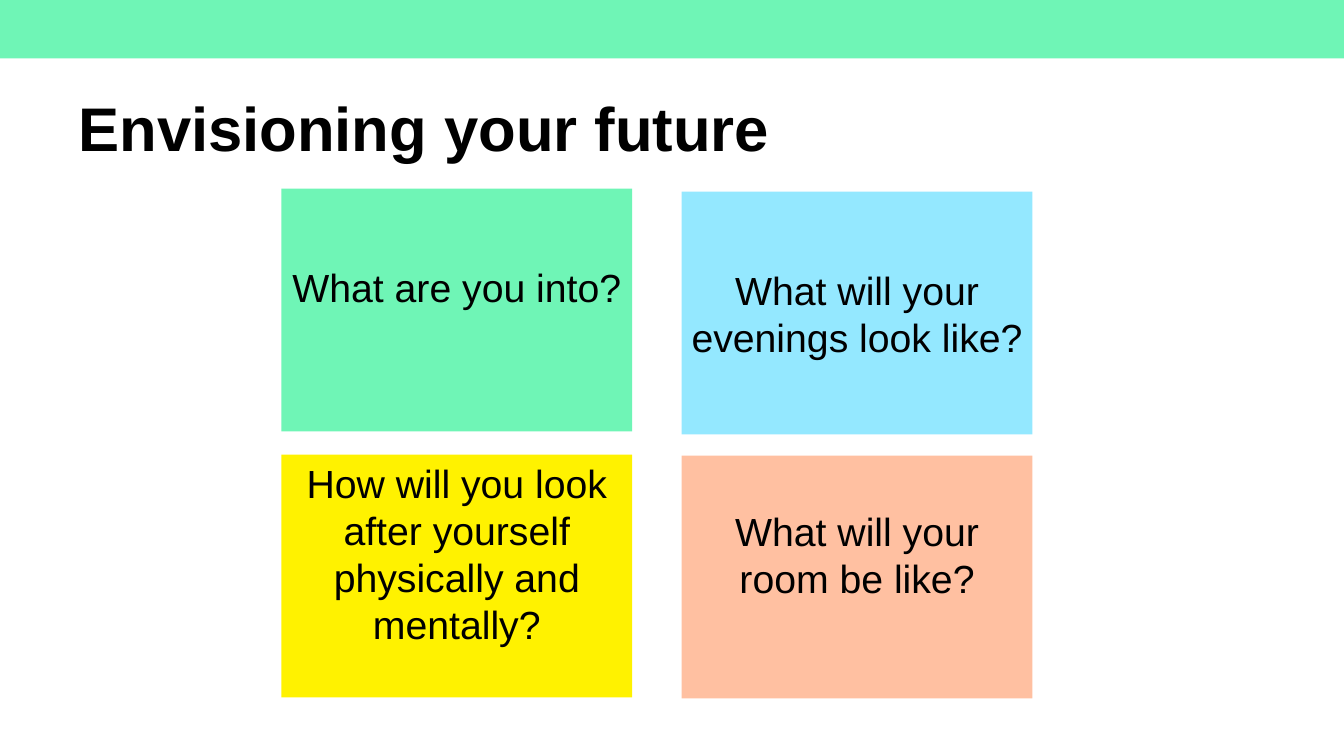
from pptx import Presentation
from pptx.dml.color import RGBColor
from pptx.enum.shapes import MSO_SHAPE
from pptx.enum.text import MSO_ANCHOR, PP_ALIGN
from pptx.util import Inches, Pt

BLACK = RGBColor(0x00, 0x00, 0x00)
GREEN = RGBColor(0x6F, 0xF5, 0xB6)
BLUE = RGBColor(0x94, 0xE8, 0xFF)
YELLOW = RGBColor(0xFF, 0xF2, 0x00)
PEACH = RGBColor(0xFF, 0xC0, 0xA1)

WIDE, HIGH = 13.33, 7.5
LEFT, RIGHT = 2.79, 6.76
CARD_W, CARD_H = 3.48, 2.41
LOW, LIFT = 0.05, 0.5

CARDS = [
    (LEFT, 1.87, GREEN, "What are you into?", LIFT),
    (RIGHT, 1.9, BLUE, "What will your evenings look like?", LOW),
    (LEFT, 4.51, YELLOW,
     "How will you look after yourself physically and mentally?", LIFT),
    (RIGHT, 4.52, PEACH, "What will your room be like?", LIFT),
]


class Deck:
    """Holds the text style and the current slide, and draws its parts."""

    def __init__(self):
        self.font = "Arial"
        self.ink = BLACK
        self.show = Presentation()
        self.show.slide_width = Inches(WIDE)
        self.show.slide_height = Inches(HIGH)
        self.slide = self.show.slides.add_slide(self.show.slide_layouts[6])

    def label(self, shape, text, size, align, bold=False):
        frame = shape.text_frame
        frame.word_wrap = True
        frame.vertical_anchor = MSO_ANCHOR.MIDDLE
        line = frame.paragraphs[0]
        line.alignment = align
        run = line.add_run()
        run.text = text
        run.font.name = self.font
        run.font.size = Pt(size)
        run.font.bold = bold
        run.font.color.rgb = self.ink
        return line

    def title(self, text, *area):
        box = self.slide.shapes.add_textbox(*map(Inches, area))
        line = self.label(box, text, 44, PP_ALIGN.LEFT, bold=True)
        line.line_spacing = 0.9

    def block(self, fill, *area):
        shape = self.slide.shapes.add_shape(
            MSO_SHAPE.RECTANGLE, *map(Inches, area))
        shape.shadow.inherit = False
        shape.fill.solid()
        shape.fill.fore_color.rgb = fill
        shape.line.fill.background()
        return shape

    def card(self, left, top, fill, text, inset):
        shape = self.block(fill, left, top, CARD_W, CARD_H)
        shape.text_frame.margin_bottom = Inches(inset)
        self.label(shape, text, 28, PP_ALIGN.CENTER)


def main():
    deck = Deck()
    deck.title("Envisioning your future", 0.68, 0.58, 11.05, 1.45)
    deck.block(GREEN, 0, 0, WIDE, 0.58)
    for card in CARDS:
        deck.card(*card)
    deck.show.save("out.pptx")


if __name__ == "__main__":
    main()
